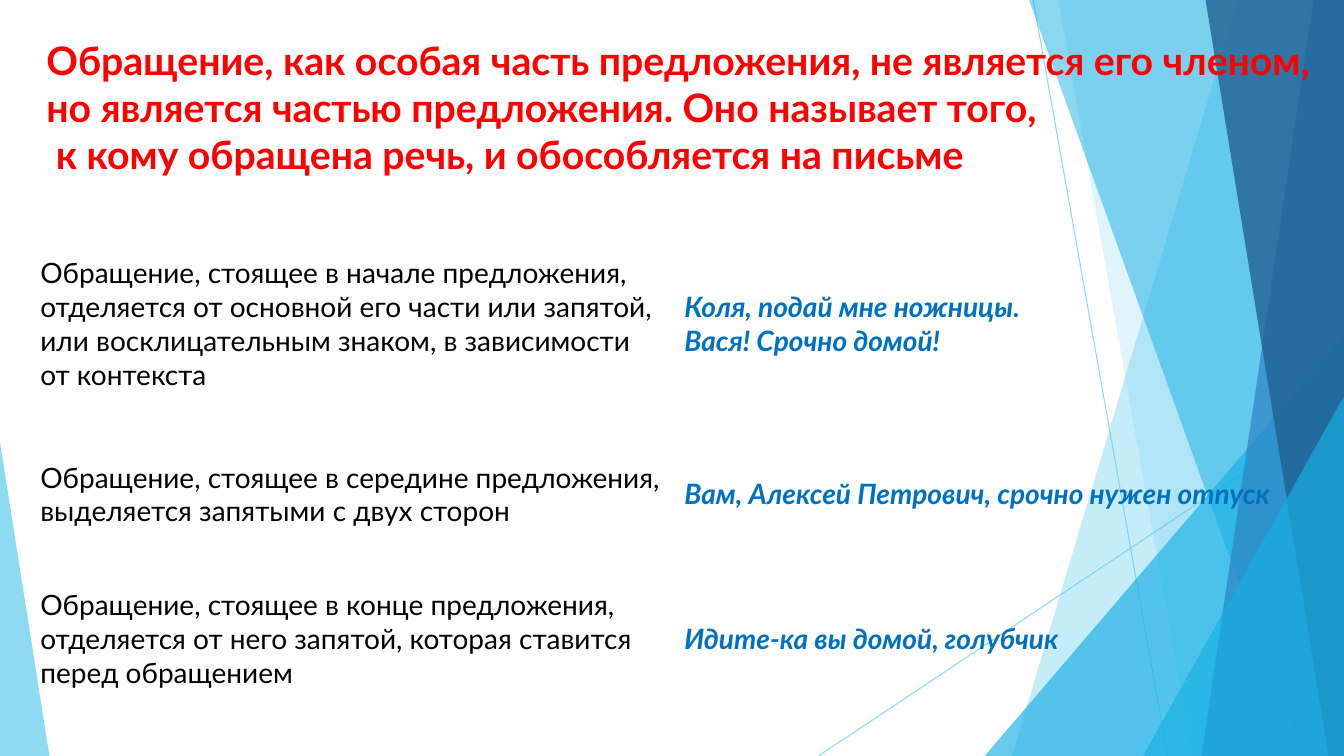
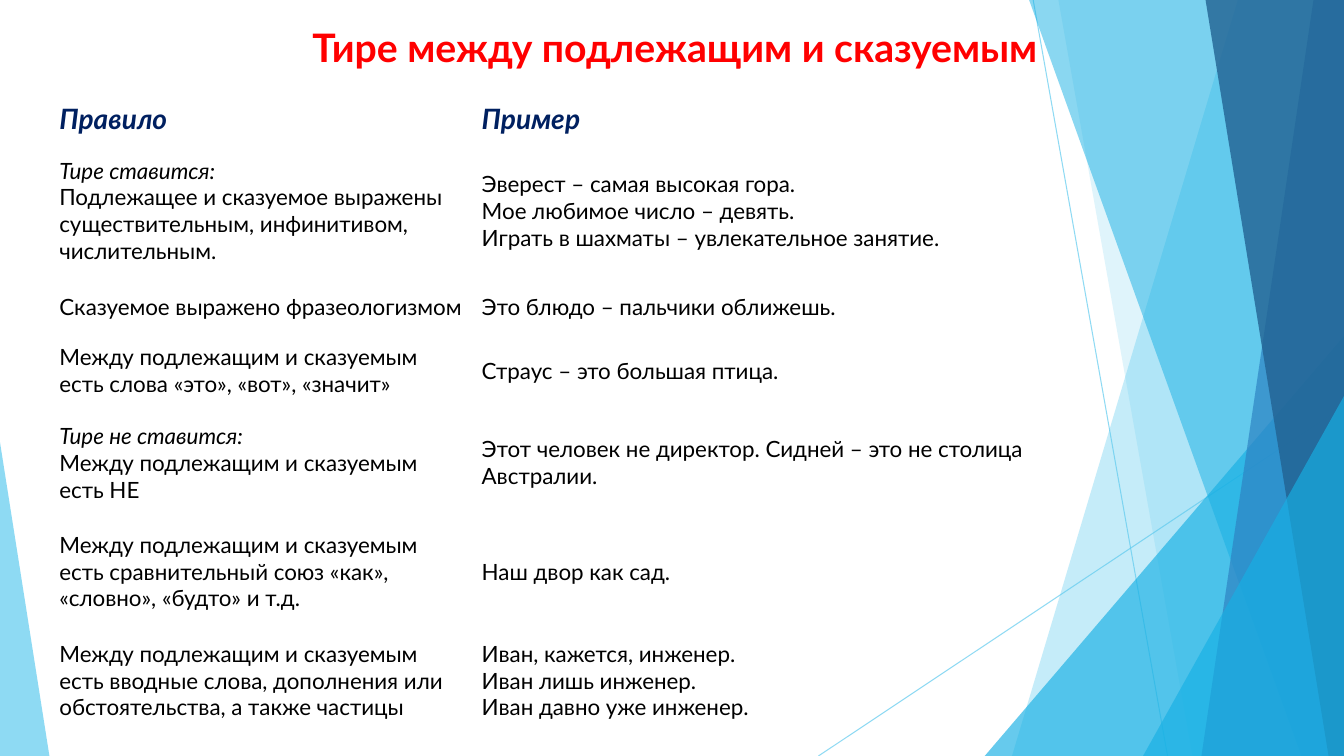
from dataclasses import dataclass
from typing import NamedTuple

import lxml.etree
import pptx
import pptx.dml.color
import pptx.enum.shapes
import pptx.enum.text
import pptx.oxml.ns
import pptx.util

Pt = pptx.util.Pt
RGB = pptx.dml.color.RGBColor.from_string
qn = pptx.oxml.ns.qn
ALIGN = pptx.enum.text.PP_ALIGN
ANCHOR = pptx.enum.text.MSO_ANCHOR
SHAPES = pptx.enum.shapes.MSO_SHAPE
WIDTH, HEIGHT = 960, 540
TITLE_ONLY = 5
NO_STYLE_NO_GRID = "{2D5ABB26-0587-4C30-8999-92F81FD0307C}"


class Style(NamedTuple):
    size: float
    color: str
    bold: bool = False
    italic: bool = False


@dataclass(frozen=True)
class Theme:
    font: str = "Lato"
    sky: str = "5FCBEF"
    cyan: str = "17B0E4"
    blue: str = "2E83C3"
    navy: str = "226292"
    title: Style = Style(28, "FF0000", bold=True)
    rule: Style = Style(20, "000000")
    example: Style = Style(20, "0070C0", bold=True, italic=True)
    header: Style = Style(20, "002060", bold=True, italic=True)
    body: Style = Style(16, "000000")
    lead: Style = Style(16, "000000", italic=True)


THEME = Theme()


class Box(NamedTuple):
    left: float
    top: float
    width: float
    height: float

    def lengths(self) -> list:
        return [Pt(v) for v in self]


class Ray(NamedTuple):
    start: tuple[float, float]
    end: tuple[float, float]
    color: str
    alpha: int


class Band(NamedTuple):
    """Full-height facet from a slanted left edge to the right slide edge."""
    top_x: float
    bottom_x: float
    color: str
    alpha: int


class Corner(NamedTuple):
    box: Box
    apex: float
    color: str
    alpha: int


class Line(NamedTuple):
    text: str
    style: Style


class Grid(NamedTuple):
    left: float
    top: float
    cols: list[float]
    rows: list[float]
    margins: tuple[float, float]


BACKDROP = [
    Ray((738, 0), (834, HEIGHT), THEME.sky, 70),
    Ray((WIDTH, 290), (584.6, HEIGHT), THEME.sky, 70),
    Band(884.2, 722.9, THEME.sky, 36),
    Band(756, 851.8, THEME.sky, 20),
    Corner(Box(703.4, 240, 256.6, 300), 1, THEME.cyan, 66),
    Band(735.1, 929.5, THEME.cyan, 50),
    Band(938.2, 858.2, THEME.blue, 70),
    Band(861.1, 949, THEME.navy, 80),
    Corner(Box(816.5, 283, 143.5, 257), 1, THEME.cyan, 66),
    Corner(Box(0, 316, 35.3, 224), 0, THEME.sky, 70),
]

ADDRESS_TITLE = [
    "Обращение, как особая часть предложения, не является его членом, "
    "но является частью предложения. Оно называет того,",
    " к кому обращена речь, и обособляется на письме",
]
ADDRESS_GRID = Grid(21.6, 152, [460, 460], [158.4, 85, 121.6], (7.2, 3.6))
ADDRESS_ROWS = [
    ("Обращение, стоящее в начале предложения, отделяется от основной его части "
     "или запятой, или восклицательным знаком, в зависимости от контекста",
     ["Коля, подай мне ножницы.", "Вася! Срочно домой!"]),
    ("Обращение, стоящее в середине предложения, выделяется запятыми с двух сторон",
     ["Вам, Алексей Петрович, срочно нужен отпуск"]),
    ("Обращение, стоящее в конце предложения, отделяется от него запятой, "
     "которая ставится перед обращением",
     ["Идите-ка вы домой, голубчик"]),
]

DASH_TITLE = ["Тире между подлежащим и сказуемым"]
DASH_GRID = Grid(37.4, 69.1, [301.7, 477.4],
                 [31, 100.8, 36.7, 54, 77.8, 77.8, 77.8], (5.04, 2.88))
DASH_HEADER = ["Правило", "Пример"]
DASH_ROWS = [
    ("Тире ставится:",
     "Подлежащее и сказуемое выражены существительным, инфинитивом, числительным.",
     ["Эверест – самая высокая гора.", "Мое любимое число – девять.",
      "Играть в шахматы – увлекательное занятие."]),
    ("", "Сказуемое выражено фразеологизмом", ["Это блюдо – пальчики оближешь."]),
    ("", "Между подлежащим и сказуемым есть слова «это», «вот», «значит»",
     ["Страус – это большая птица."]),
    ("Тире не ставится:", "Между подлежащим и сказуемым есть НЕ",
     ["Этот человек не директор. Сидней – это не столица Австралии."]),
    ("", "Между подлежащим и сказуемым есть сравнительный союз «как», "
     "«словно», «будто» и т.д.",
     ["Наш двор как сад."]),
    ("", "Между подлежащим и сказуемым есть вводные слова, дополнения или "
     "обстоятельства, а также частицы",
     ["Иван, кажется, инженер.", "Иван лишь инженер.", "Иван давно уже инженер."]),
]


def set_attrs(target, values: dict) -> None:
    for name, value in values.items():
        setattr(target, name, value)


def set_alpha(sp, percent: int) -> None:
    for color in sp.element.spPr.iter(qn("a:srgbClr")):
        lxml.etree.SubElement(color, qn("a:alpha")).set("val", str(percent * 1000))


def add_run(p, text: str, style: Style) -> None:
    r = p.add_run()
    r.text = text
    set_attrs(r.font, {"name": THEME.font, "size": Pt(style.size),
                       "bold": style.bold, "italic": style.italic})
    r.font.color.rgb = RGB(style.color)


def draw_ray(s, ray: Ray):
    ends = [Pt(v) for v in (*ray.start, *ray.end)]
    line = s.shapes.add_connector(pptx.enum.shapes.MSO_CONNECTOR.STRAIGHT, *ends)
    line.line.width = Pt(0.75)
    line.line.color.rgb = RGB(ray.color)
    lxml.etree.SubElement(line.element.spPr, qn("a:effectLst"))
    return line


def draw_facet(s, facet: Band | Corner):
    if isinstance(facet, Band):
        builder = s.shapes.build_freeform(Pt(facet.top_x), 0)
        builder.add_line_segments([(Pt(WIDTH), 0), (Pt(WIDTH), Pt(HEIGHT)),
                                   (Pt(facet.bottom_x), Pt(HEIGHT))])
        sp = builder.convert_to_shape()
    else:
        sp = s.shapes.add_shape(SHAPES.ISOSCELES_TRIANGLE, *facet.box.lengths())
        sp.adjustments[0] = facet.apex
    sp.shadow.inherit = False
    sp.fill.solid()
    sp.fill.fore_color.rgb = RGB(facet.color)
    sp.line.fill.background()
    return sp


def move_backdrop_to_layout(s, layout) -> None:
    """Draw the facets through a slide, then keep them behind the layout's placeholders."""
    tree = layout.shapes.element
    for i, item in enumerate(BACKDROP):
        sp = draw_ray(s, item) if isinstance(item, Ray) else draw_facet(s, item)
        set_alpha(sp, item.alpha)
        sp.element.xpath(".//p:cNvPr")[0].set("id", str(100 + i))
        tree.insert(2 + i, sp.element)


def set_title(s, lines: list[str], box: Box, align) -> None:
    title = s.shapes.title
    set_attrs(title, dict(zip(box._fields, box.lengths())))
    tf = title.text_frame
    set_attrs(tf, {"word_wrap": True, "vertical_anchor": ANCHOR.TOP,
                   "auto_size": pptx.enum.text.MSO_AUTO_SIZE.NONE})
    p = tf.paragraphs[0]
    p.alignment = align
    for i, text in enumerate(lines):
        if i:
            p.add_line_break()
        add_run(p, text, THEME.title)


def fill_cell(cell, lines: list[Line], margins: tuple[float, float]) -> None:
    side, edge = (Pt(v) for v in margins)
    set_attrs(cell, {"vertical_anchor": ANCHOR.MIDDLE,
                     "margin_left": side, "margin_right": side,
                     "margin_top": edge, "margin_bottom": edge})
    cell.fill.background()
    tf = cell.text_frame
    for i, line in enumerate(lines):
        p = tf.add_paragraph() if i else tf.paragraphs[0]
        add_run(p, line.text, line.style)


def add_grid(s, grid: Grid, rows: list[list[list[Line]]]) -> None:
    box = Box(grid.left, grid.top, sum(grid.cols), sum(grid.rows))
    frame = s.shapes.add_table(len(grid.rows), len(grid.cols), *box.lengths())
    frame.element.xpath(".//a:tableStyleId")[0].text = NO_STYLE_NO_GRID
    table = frame.table
    set_attrs(table, {"first_row": False, "horz_banding": False})
    for col, width in zip(table.columns, grid.cols):
        col.width = Pt(width)
    for row, height, cells in zip(table.rows, grid.rows, rows):
        row.height = Pt(height)
        for cell, lines in zip(row.cells, cells):
            fill_cell(cell, lines, grid.margins)


def styled(texts: list[str], style: Style) -> list[Line]:
    return [Line(text, style) for text in texts]


def build_address_slide(s) -> None:
    set_title(s, ADDRESS_TITLE, Box(26, 22.3, 925, 107.3), ALIGN.LEFT)
    add_grid(s, ADDRESS_GRID, [
        [styled([rule], THEME.rule), styled(examples, THEME.example)]
        for rule, examples in ADDRESS_ROWS])


def build_dash_slide(s) -> None:
    set_title(s, DASH_TITLE, Box(16, 13, 932, 76), ALIGN.CENTER)
    header = [styled([text], THEME.header) for text in DASH_HEADER]
    body = [[styled([lead] if lead else [], THEME.lead) + styled([rule], THEME.body),
             styled(examples, THEME.body)]
            for lead, rule, examples in DASH_ROWS]
    add_grid(s, DASH_GRID, [header, *body])


def main() -> None:
    prs = pptx.Presentation()
    set_attrs(prs, {"slide_width": Pt(WIDTH), "slide_height": Pt(HEIGHT)})
    layout = prs.slide_layouts[TITLE_ONLY]
    address, dash = (prs.slides.add_slide(layout) for _ in range(2))
    move_backdrop_to_layout(address, layout)
    build_address_slide(address)
    build_dash_slide(dash)
    prs.save("out.pptx")


if __name__ == "__main__":
    main()
